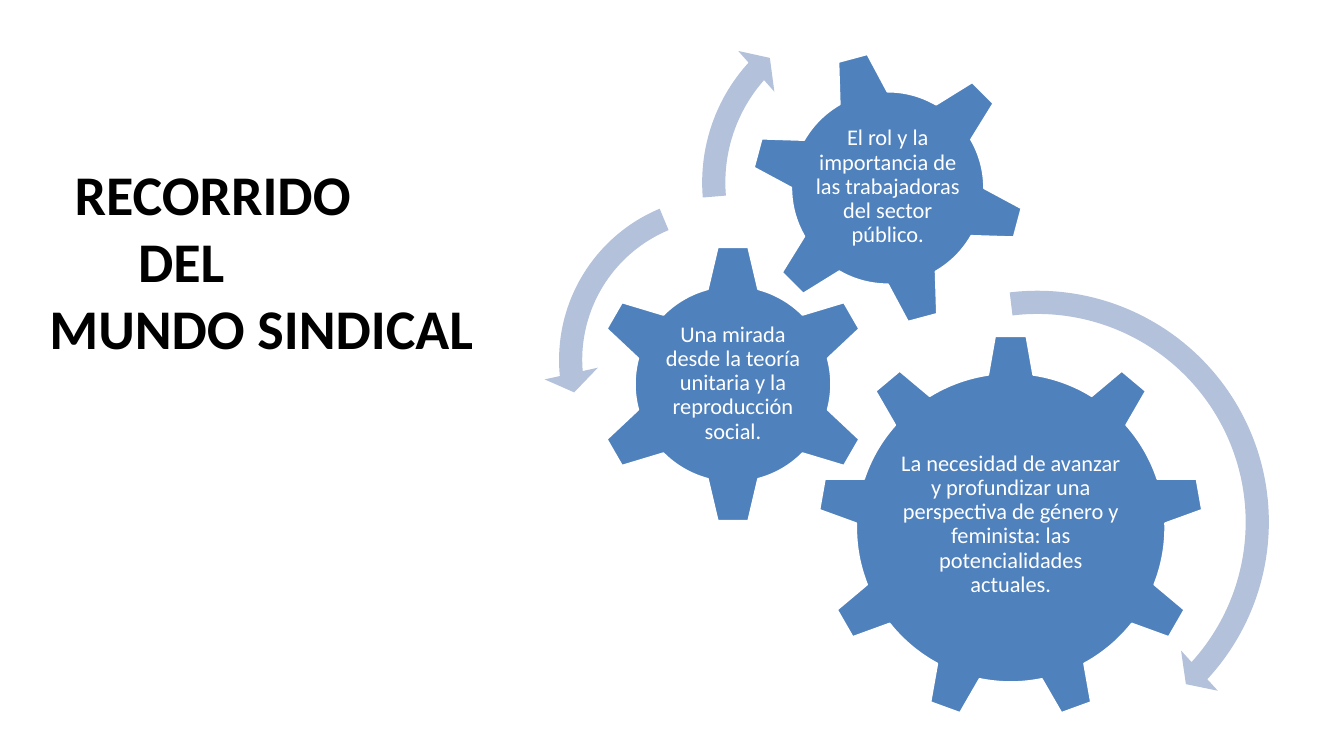
"""Build the slide on the union world, with three interlocking gears."""
from dataclasses import dataclass

import pptx
import pptx.dml.color
import pptx.enum.shapes
import pptx.enum.text
import pptx.util

Inches = pptx.util.Inches
SHAPE = pptx.enum.shapes.MSO_SHAPE
ALIGN = pptx.enum.text.PP_ALIGN
ANCHOR = pptx.enum.text.MSO_ANCHOR


@dataclass(frozen=True)
class Theme:
    """Colours, font and sizes of the slide."""
    font: str = "Calibri"
    title: str = "000000"
    gear: str = "4F81BD"
    light: str = "FFFFFF"
    arrow: str = "B3C1DB"
    title_size: int = 40
    gear_size: int = 16
    outline: float = 1.25


THEME = Theme()
ARROW_WIDTH = 0.23
ARROW_HEAD = 0.27

TITLE_LINES = [("RECORRIDO", 0.25), ("DEL", 0.88), ("MUNDO SINDICAL", 0)]

GEARS = [
    (SHAPE.GEAR_9, 8.11, 3.32, 3.83, 0, (8.88, 4.22, 2.29, 1.97),
     "La necesidad de avanzar y profundizar una perspectiva de género y "
     "feminista: las potencialidades actuales."),
    (SHAPE.GEAR_6, 5.88, 2.42, 2.78, 0, (6.58, 3.12, 1.38, 1.37),
     "Una mirada desde la teoría unitaria y la reproducción social."),
    (SHAPE.GEAR_6, 7.44, 0.5, 2.73, 345, (8.04, 1.09, 1.53, 1.53),
     "El rol y la importancia de las trabajadoras del sector público."),
]

ARROWS = [
    (SHAPE.CIRCULAR_ARROW, 7.84, 2.73, 4.9, (2.99, 25.52, 157.87)),
    (SHAPE.LEFT_CIRCULAR_ARROW, 5.39, 1.79, 3.56, (4.3, 104.89, 148.38)),
    (SHAPE.CIRCULAR_ARROW, 6.81, -0.11, 3.84, (3.94, 133.14, 105.08)),
]


def rgb(value):
    """Return a colour from its hex form."""
    return pptx.dml.color.RGBColor.from_string(value)


def style_run(r, size, color, bold=False):
    """Set the font of a run."""
    r.font.name = THEME.font
    r.font.size = pptx.util.Pt(size)
    r.font.color.rgb = rgb(color)
    r.font.bold = bold


def add_title(s):
    """Fill the title placeholder with its stepped lines."""
    title = s.shapes.title
    title.left, title.top = Inches(0.39), Inches(1.13)
    title.width, title.height = Inches(5.23), Inches(2.5)
    tf = title.text_frame
    tf.text = "\n".join(line for line, _ in TITLE_LINES)
    tf.word_wrap = True
    tf.auto_size = pptx.enum.text.MSO_AUTO_SIZE.NONE
    tf.vertical_anchor = ANCHOR.BOTTOM
    for p, (_, indent) in zip(tf.paragraphs, TITLE_LINES):
        p.alignment = ALIGN.LEFT
        p._p.get_or_add_pPr().set("marL", str(Inches(indent)))
        style_run(p.runs[0], THEME.title_size, THEME.title, bold=True)


def add_round_shape(group, kind, left, top, size, color):
    """Add a filled shape in a square frame."""
    sp = group.shapes.add_shape(kind, Inches(left), Inches(top),
                                Inches(size), Inches(size))
    sp.shadow.inherit = False
    sp.fill.solid()
    sp.fill.fore_color.rgb = rgb(color)
    sp.line.fill.background()
    return sp


def add_label(group, box, text):
    """Add the centred text of a gear."""
    tf = group.shapes.add_textbox(*map(Inches, box)).text_frame
    tf.text = text
    tf.word_wrap = True
    tf.vertical_anchor = ANCHOR.MIDDLE
    tf.margin_left = tf.margin_right = Inches(0.02)
    tf.margin_top = tf.margin_bottom = Inches(0.02)
    p = tf.paragraphs[0]
    p.alignment = ALIGN.CENTER
    p.line_spacing = 0.9
    style_run(p.runs[0], THEME.gear_size, THEME.light)


def add_gear(group, kind, left, top, size, rotation, box, text):
    """Add an outlined gear and its label."""
    sp = add_round_shape(group, kind, left, top, size, THEME.gear)
    sp.rotation = rotation
    sp.line.color.rgb = rgb(THEME.light)
    sp.line.width = pptx.util.Pt(THEME.outline)
    add_label(group, box, text)


def add_arrow(group, kind, left, top, size, angles):
    """Add a curved arrow with the common band and head widths."""
    sp = add_round_shape(group, kind, left, top, size, THEME.arrow)
    values = (ARROW_WIDTH / size, *angles, ARROW_HEAD / size)
    for i, value in enumerate(values):
        sp.adjustments[i] = value


def main():
    """Build and save the slide."""
    prs = pptx.Presentation()
    prs.slide_width, prs.slide_height = Inches(13.33), Inches(7.5)
    s = prs.slides.add_slide(prs.slide_layouts[5])
    add_title(s)
    group = s.shapes.add_group_shape()
    for gear in GEARS:
        add_gear(group, *gear)
    for arrow in ARROWS:
        add_arrow(group, *arrow)
    prs.save("out.pptx")


if __name__ == "__main__":
    main()
